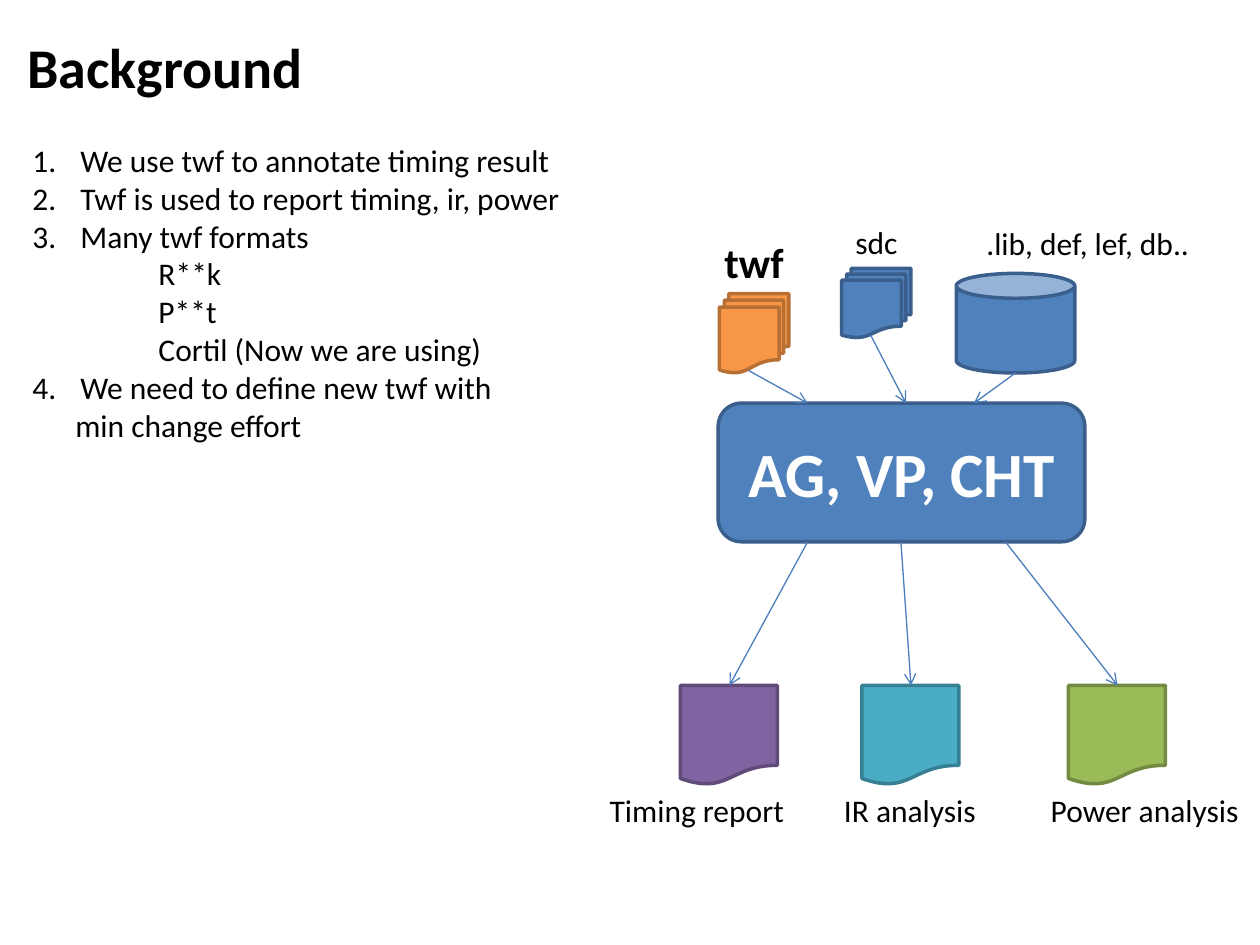
"""Build the Background slide: notes on twf and the flow from inputs to reports."""
from lxml import etree
from pptx import Presentation
from pptx import util as u
from pptx.dml.color import RGBColor
from pptx.enum import shapes, text
from pptx.oxml.ns import qn

FONT = "Calibri"
COLORS = {
    "black": "000000", "white": "FFFFFF", "arrow": "4B7EBC",
    "blue": "4F81BD", "blue_edge": "3A5F8C",
    "orange": "F79646", "orange_edge": "B76F34",
    "purple": "8064A2", "purple_edge": "5F4A78",
    "teal": "4BACC6", "teal_edge": "377F92",
    "green": "9BBB59", "green_edge": "738A42",
}
KIND = shapes.MSO_SHAPE
TOOL_TOP, TOOL_BOTTOM, REPORT_TOP = 3.2, 4.3, 5.44

NOTES = [
    ("We use twf to annotate timing result", 1),
    ("Twf is used to report timing, ir, power", 2),
    ("Many twf formats", 3),
    ("R**k", "sub"),
    ("P**t", "sub"),
    ("Cortil (Now we are using)", "sub"),
    ("We need to define new twf with", 4),
    ("min change effort", "continued"),
]
INDENTS = {"sub": 1.0, "continued": 0.34}

INPUTS = [
    (KIND.FLOWCHART_MULTIDOCUMENT, (5.71, 2.33, 0.55, 0.63), "orange", (5.94, 2.94), 6.41),
    (KIND.FLOWCHART_MULTIDOCUMENT, (6.68, 2.13, 0.55, 0.55), "blue", (6.91, 2.66), 7.19),
    (KIND.CAN, (7.59, 2.17, 0.94, 0.79), "blue", (8.06, 2.96), 7.73),
]
REPORTS = [(5.4, "purple", 6.41), (6.84, "teal", 7.15), (8.48, "green", 7.98)]
LABELS = [
    ("Background", (0.12, 0.21, 4.15, 0.64), 32, True),
    (".lib, def, lef, db..", (7.73, 1.73, 1.83, 0.4), 18, False),
    ("sdc", (6.69, 1.72, 0.54, 0.4), 18, False),
    ("twf", (5.65, 1.83, 0.68, 0.5), 24, True),
    ("Timing report", (4.74, 6.23, 1.6, 0.4), 18, False),
    ("IR analysis", (6.6, 6.23, 1.26, 0.4), 18, False),
    ("Power analysis", (8.24, 6.23, 1.71, 0.4), 18, False),
]


def rgb(name):
    return RGBColor.from_string(COLORS[name])


def inches(values):
    return [u.Inches(v) for v in values]


def add_run(p, words, size, bold=False, color="black"):
    r = p.add_run()
    r.text = words
    r.font.name, r.font.size, r.font.bold = FONT, u.Pt(size), bold
    r.font.color.rgb = rgb(color)


def add_box(s, kind, box, color):
    sp = s.shapes.add_shape(kind, *inches(box))
    sp.shadow.inherit = False
    sp.fill.solid()
    sp.fill.fore_color.rgb = rgb(color)
    sp.line.color.rgb = rgb(color + "_edge")
    sp.line.width = u.Pt(2)
    return sp


def add_arrow(s, start, end):
    cx = s.shapes.add_connector(shapes.MSO_CONNECTOR.STRAIGHT, *inches(start + end))
    cx.line.color.rgb = rgb("arrow")
    cx.line.width = u.Pt(0.75)
    etree.SubElement(cx.line._get_or_add_ln(), qn("a:tailEnd"), type="arrow")
    etree.SubElement(cx._element.spPr, qn("a:effectLst"))


def add_textbox(s, box, wrap=False):
    tf = s.shapes.add_textbox(*inches(box)).text_frame
    tf.word_wrap = wrap
    return tf


def add_notes(s):
    tf = add_textbox(s, (0.16, 1.07, 4.43, 2.52))
    for i, (words, level) in enumerate(NOTES):
        p = tf.add_paragraph() if i else tf.paragraphs[0]
        pPr = p._p.get_or_add_pPr()
        if level in INDENTS:
            pPr.set("marL", str(u.Inches(INDENTS[level])))
        else:
            pPr.set("marL", str(u.Inches(0.38)))
            pPr.set("indent", str(-u.Inches(0.38)))
            etree.SubElement(pPr, qn("a:buFont"), typeface="+mj-lt")
            bu = etree.SubElement(pPr, qn("a:buAutoNum"), type="arabicPeriod")
            if level == 4:
                bu.set("startAt", "4")
        add_run(p, words, 18)


def main():
    prs = Presentation()
    prs.slide_width, prs.slide_height = inches((10, 7.5))
    s = prs.slides.add_slide(prs.slide_layouts[6])

    tool = add_box(s, KIND.ROUNDED_RECTANGLE, (5.7, TOOL_TOP, 2.91, TOOL_BOTTOM - TOOL_TOP), "blue")
    tf = tool.text_frame
    tf.vertical_anchor = text.MSO_ANCHOR.MIDDLE
    p = tf.paragraphs[0]
    p.alignment = text.PP_ALIGN.CENTER
    add_run(p, "AG, VP, CHT", 36, True, "white")

    for kind, box, color, start, end_x in INPUTS:
        add_box(s, kind, box, color)
        add_arrow(s, start, (end_x, TOOL_TOP))
    for left, color, start_x in REPORTS:
        add_box(s, KIND.FLOWCHART_DOCUMENT, (left, REPORT_TOP, 0.77, 0.79), color)
        add_arrow(s, (start_x, TOOL_BOTTOM), (left + 0.39, REPORT_TOP))
    for words, box, size, bold in LABELS:
        tf = add_textbox(s, box, wrap=words == "Background")
        add_run(tf.paragraphs[0], words, size, bold)
    add_notes(s)
    prs.save("out.pptx")


if __name__ == "__main__":
    main()
